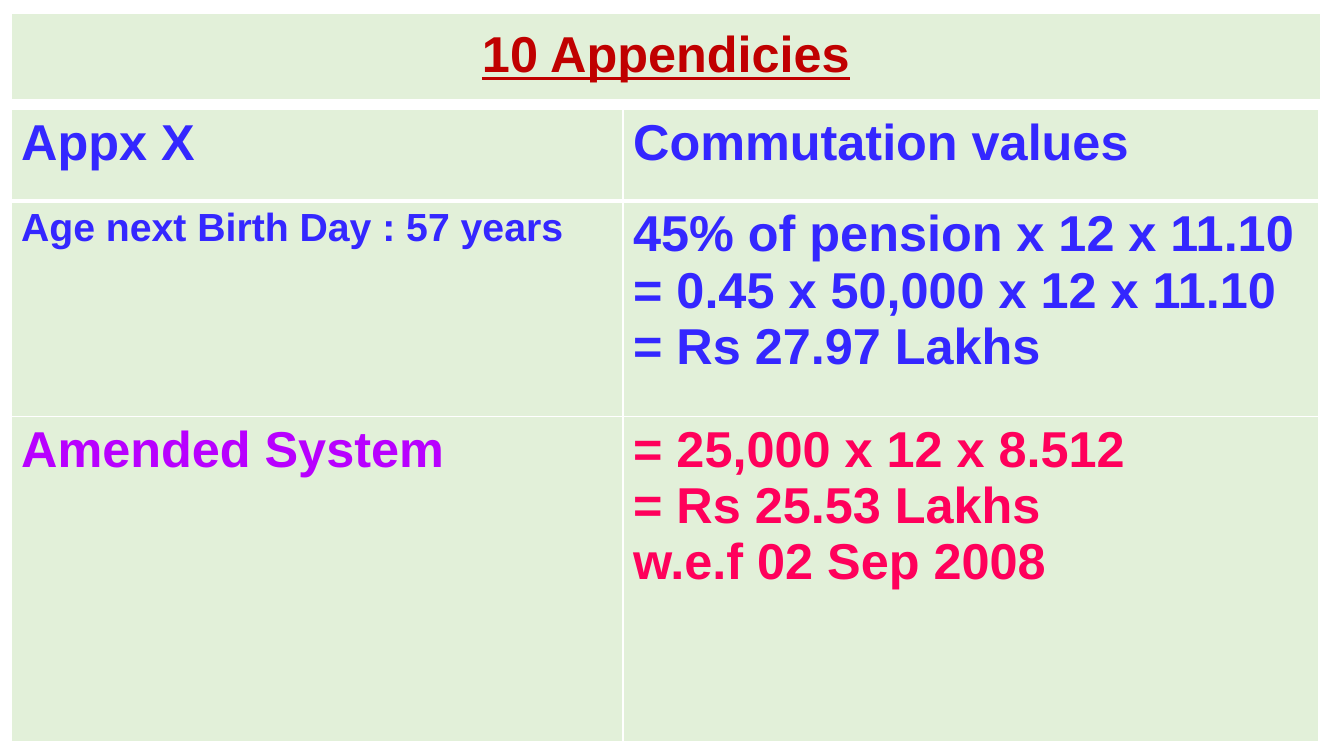
from dataclasses import dataclass

from lxml.etree import SubElement
from pptx import Presentation
from pptx.dml.color import RGBColor as RGB
from pptx.enum.text import MSO_ANCHOR as Anchor, PP_ALIGN as Align
from pptx.oxml.ns import qn
from pptx.util import Inches, Pt


@dataclass(frozen=True)
class Theme:
    font: str = "Arial"
    panel: str = "E2F0D9"
    heading: str = "C00000"
    body: str = "3427FF"
    amended: str = "B800FF"
    amended_sum: str = "FF005B"
    border: str = "FFFFFF"
    large: int = 36
    small: int = 28
    thin: int = 1
    thick: int = 3


THEME = Theme()
TITLE_BOX = (0.12, 0.14, 12.97, 0.84)
TABLE_BOX = (0.11, 1.09, 12.97, 6.27)
COLUMN_SHARES = (0.468, 0.532)
ROW_SHARES = (0.144, 0.341, 0.515)

# Each cell: its lines, colour and type size
COMMUTATION = [
    [(["Appx X"], THEME.body, THEME.large),
     (["Commutation values"], THEME.body, THEME.large)],
    [(["Age next Birth Day : 57 years"], THEME.body, THEME.small),
     (["45% of pension x 12 x 11.10",
       "= 0.45 x 50,000 x 12 x 11.10",
       "= Rs 27.97 Lakhs"], THEME.body, THEME.large)],
    [(["Amended System"], THEME.amended, THEME.large),
     (["= 25,000 x 12 x 8.512",
       "= Rs 25.53 Lakhs",
       "w.e.f 02 Sep 2008"], THEME.amended_sum, THEME.large)],
]


def paint(part, color):
    part.fill.solid()
    part.fill.fore_color.rgb = RGB.from_string(color)


def write_lines(frame, lines, color, size, underline=None):
    for index, line in enumerate(lines):
        paragraph = frame.add_paragraph() if index else frame.paragraphs[0]
        run = paragraph.add_run()
        run.text = line
        run.font.name = THEME.font
        run.font.size = Pt(size)
        run.font.bold = True
        run.font.underline = underline
        run.font.color.rgb = RGB.from_string(color)


def set_borders(cell, top, bottom):
    properties = cell._tc.get_or_add_tcPr()
    widths = {"a:lnL": THEME.thin, "a:lnR": THEME.thin, "a:lnT": top, "a:lnB": bottom}
    for side, width in widths.items():
        line = SubElement(properties, qn(side), w=str(Pt(width)))
        fill = SubElement(line, qn("a:solidFill"))
        SubElement(fill, qn("a:srgbClr"), val=THEME.border)


def place_title(slide, box):
    title = slide.shapes.title
    title.left, title.top, title.width, title.height = map(Inches, box)
    paint(title, THEME.panel)
    frame = title.text_frame
    frame.word_wrap = True
    frame.vertical_anchor = Anchor.MIDDLE
    write_lines(frame, ["10 Appendicies"], THEME.heading, THEME.large, underline=True)
    frame.paragraphs[0].alignment = Align.CENTER
    frame.paragraphs[0].line_spacing = 0.9


def place_commutation_table(slide, box):
    left, top, width, height = map(Inches, box)
    table = slide.shapes.add_table(
        len(ROW_SHARES), len(COLUMN_SHARES), left, top, width, height).table
    for column, share in zip(table.columns, COLUMN_SHARES):
        column.width = int(width * share)
    for row, share in zip(table.rows, ROW_SHARES):
        row.height = int(height * share)
    for r, entries in enumerate(COMMUTATION):
        for c, (lines, color, size) in enumerate(entries):
            cell = table.cell(r, c)
            # A thick rule parts the header from the rows below
            set_borders(cell,
                        top=THEME.thick if r == 1 else THEME.thin,
                        bottom=THEME.thick if r == 0 else THEME.thin)
            paint(cell, THEME.panel)
            write_lines(cell.text_frame, lines, color, size)


def main():
    deck = Presentation()
    deck.slide_width, deck.slide_height = Inches(13.33), Inches(7.5)
    slide = deck.slides.add_slide(deck.slide_layouts[5])
    place_title(slide, TITLE_BOX)
    place_commutation_table(slide, TABLE_BOX)
    deck.save("out.pptx")


if __name__ == "__main__":
    main()
